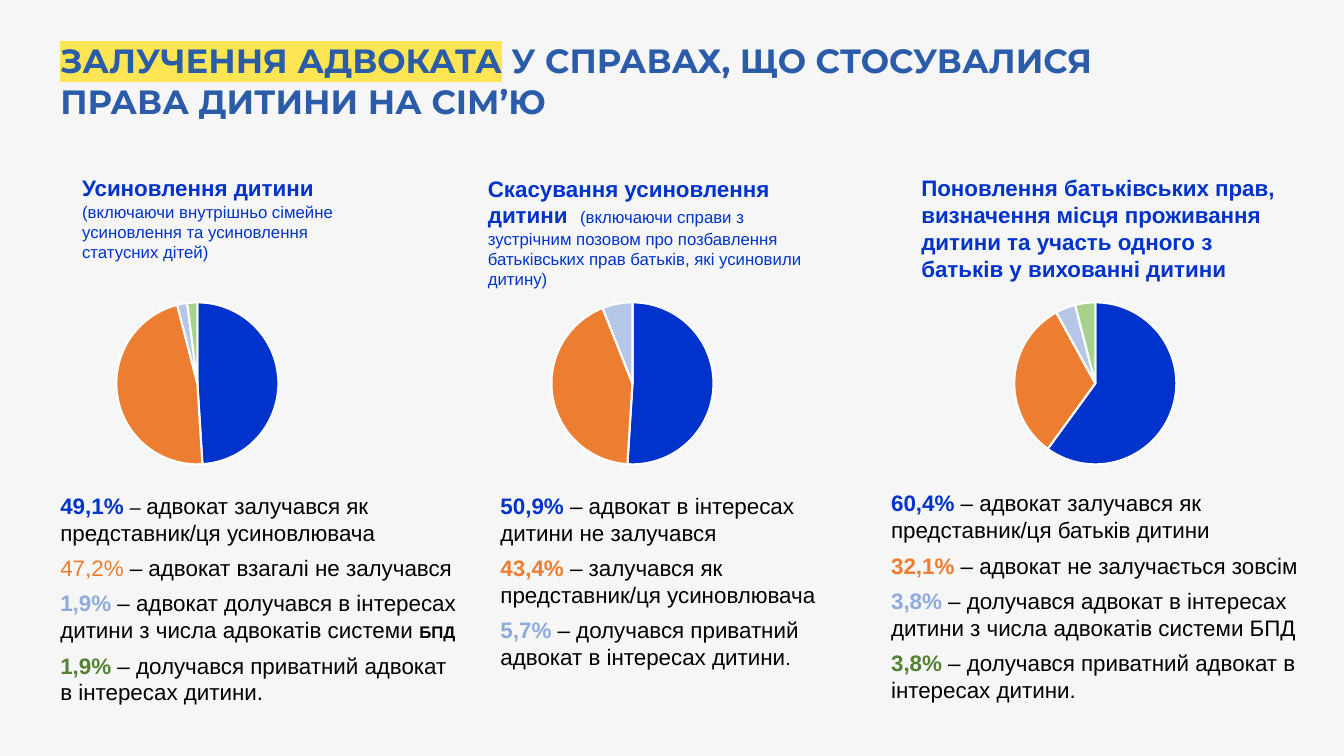
from dataclasses import dataclass

from lxml import etree
from pptx import Presentation
from pptx.chart.data import CategoryChartData
from pptx.dml.color import RGBColor
from pptx.enum.chart import XL_CHART_TYPE
from pptx.enum.text import MSO_AUTO_SIZE
from pptx.oxml import parse_xml
from pptx.oxml.ns import nsdecls, qn
from pptx.util import Inches, Pt

PIE = XL_CHART_TYPE.PIE
GROW = MSO_AUTO_SIZE.SHAPE_TO_FIT_TEXT


@dataclass(frozen=True)
class Theme:
    paper: str = "F6F6F6"
    title: str = "2A5CAA"
    marker: str = "FEE554"
    ink: str = "000000"
    blue: str = "0033CC"
    separator: str = "FFFFFF"
    slices: tuple = ("0033CC", "ED7D31", "B4C7E7", "A9D18E")
    shares: tuple = ("0033CC", "ED7D31", "8FAADC", "548235")
    title_font: str = "Montserrat"
    body_font: str = "Arial"
    chart_font: str = "Calibri"
    title_size: int = 24
    body_size: int = 16
    dash_size: int = 14
    note_size: int = 12
    chart_size: int = 10


THEME = Theme()


def add_span(para, text, size=THEME.body_size, color=THEME.ink, bold=False,
             font=THEME.body_font, highlight=None):
    span = para.add_run()
    span.text = text
    span.font.size = Pt(size)
    span.font.bold = bold
    span.font.name = font
    span.font.color.rgb = RGBColor.from_string(color)
    if highlight:
        mark = etree.Element(qn("a:highlight"))
        etree.SubElement(mark, qn("a:srgbClr"), val=highlight)
        span.font.fill  # resolved before the marker is placed
        span.font._rPr.find(qn("a:latin")).addprevious(mark)


class Page:
    """Draws styled elements on a slide measured in a 16 by 9 grid."""

    def __init__(self, deck, theme):
        self.theme = theme
        self.column = deck.slide_width / 16
        self.row = deck.slide_height / 9
        self.slide = deck.slides.add_slide(deck.slide_layouts[6])
        fill = self.slide.background.fill
        fill.solid()
        fill.fore_color.rgb = RGBColor.from_string(theme.paper)

    def place(self, left, top, width, height):
        return (round(left * self.column), round(top * self.row),
                round(width * self.column), round(height * self.row))

    def text(self, area, paragraphs, before=0, after=0):
        frame = self.slide.shapes.add_textbox(*self.place(*area)).text_frame
        frame.word_wrap = True
        frame.auto_size = GROW
        for index, spans in enumerate(paragraphs):
            para = frame.add_paragraph() if index else frame.paragraphs[0]
            para.space_before, para.space_after = Pt(before), Pt(after)
            for text, style in spans:
                add_span(para, text, **style)

    def title(self, area, marked, rest):
        style = dict(size=self.theme.title_size, color=self.theme.title,
                     bold=True, font=self.theme.title_font)
        marked_style = dict(style, highlight=self.theme.marker)
        self.text(area, [[(marked, marked_style), (rest, style)]], 12, 12)

    def heading(self, area, paragraphs):
        styles = {"head": dict(color=self.theme.blue, bold=True),
                  "note": dict(color=self.theme.blue, size=self.theme.note_size)}
        self.text(area, [[(text, styles[role]) for role, text in spans]
                         for spans in paragraphs])

    def findings(self, area, items, plain_shares=()):
        paragraphs = []
        for (share, *spans), color in zip(items, self.theme.shares):
            style = dict(color=color, bold=share not in plain_shares)
            paragraphs.append([(share + " ", style), *spans])
        self.text(area, paragraphs, before=6)

    def pie(self, area, values):
        data = CategoryChartData()
        data.categories = [str(number + 1) for number in range(len(values))]
        data.add_series("Series 1", values)
        chart = self.slide.shapes.add_chart(PIE, *self.place(*area), data).chart
        chart.has_legend = False
        chart.has_title = False
        chart.font.name = self.theme.chart_font
        chart.font.size = Pt(self.theme.chart_size)
        chart.font.color.rgb = RGBColor.from_string(self.theme.ink)
        plot = chart.plots[0]
        plot.vary_by_categories = True
        for index, color in enumerate(self.theme.slices[:len(values)]):
            form = plot.series[0].points[index].format
            form.fill.solid()
            form.fill.fore_color.rgb = RGBColor.from_string(color)
            form.line.color.rgb = RGBColor.from_string(self.theme.separator)
            form.line.width = Pt(1.5)
        self.center_plot(chart, 0.67, 0.85)

    def center_plot(self, chart, width, height):
        area = chart._chartSpace.chart.plotArea
        for layout in area.findall(qn("c:layout")):
            area.remove(layout)
        settings = [("layoutTarget", "inner"), ("xMode", "edge"), ("yMode", "edge"),
                    ("x", (1 - width) / 2), ("y", (1 - height) / 2),
                    ("w", width), ("h", height)]
        body = "".join(f'<c:{name} val="{value}"/>' for name, value in settings)
        area.insert(0, parse_xml(f'<c:layout {nsdecls("c")}><c:manualLayout>'
                                 f'{body}</c:manualLayout></c:layout>'))


def plain(text, **style):
    return text, style


def main():
    deck = Presentation()
    deck.slide_width, deck.slide_height = Inches(13.33), Inches(7.5)
    page = Page(deck, THEME)
    page.title((0.6, 0.42, 13.4, 1.09), "ЗАЛУЧЕННЯ АДВОКАТА",
               " У СПРАВАХ, ЩО СТОСУВАЛИСЯ ПРАВА ДИТИНИ НА СІМ’Ю")

    page.heading((0.86, 2.02, 3.82, 1.18), [
        [("head", "Усиновлення дитини")],
        [("note", "(включаючи внутрішньо сімейне усиновлення та усиновлення статусних дітей)")]])
    page.heading((5.69, 2.02, 4.13, 1.5), [
        [("head", "Скасування усиновлення дитини  "),
         ("note", "(включаючи справи з зустрічним позовом про позбавлення "
                  "батьківських прав батьків, які усиновили дитину)")]])
    page.heading((10.85, 2.02, 4.74, 1.42), [
        [("head", "Поновлення батьківських прав, визначення місця проживання "
                  "дитини та участь одного з батьків у вихованні дитини")]])

    pies = [(0.9, (49, 47, 2, 2)), (6.08, (51, 43, 6)), (11.59, (60, 32, 4, 4))]
    for left, values in pies:
        page.pie((left, 3.43, 2.9, 2.27), values)

    private = plain("– долучався приватний адвокат в інтересах дитини.")
    page.findings((0.6, 5.8, 4.99, 2.69), [
        ("49,1%", plain("– ", size=THEME.dash_size),
         plain("адвокат залучався як представник/ця усиновлювача")),
        ("47,2%", plain("– адвокат взагалі не залучався")),
        ("1,9%", plain("– адвокат долучався в інтересах дитини з числа адвокатів системи "),
         plain("БПД", size=THEME.note_size, bold=True)),
        ("1,9%", private)], plain_shares=("47,2%",))
    page.findings((5.84, 5.8, 4.4, 2.26), [
        ("50,9%", plain("– адвокат в інтересах дитини не залучався")),
        ("43,4%", plain("– залучався як представник/ця усиновлювача")),
        ("5,7%", plain("– долучався приватний адвокат в інтересах дитини"),
         plain(".", size=THEME.dash_size))])
    page.findings((10.49, 5.77, 5.11, 2.69), [
        ("60,4%", plain("– адвокат залучався як представник/ця батьків дитини")),
        ("32,1%", plain("– адвокат не залучається зовсім")),
        ("3,8%", plain("– долучався адвокат в інтересах дитини з числа адвокатів системи БПД")),
        ("3,8%", private)])
    deck.save("out.pptx")


if __name__ == "__main__":
    main()
